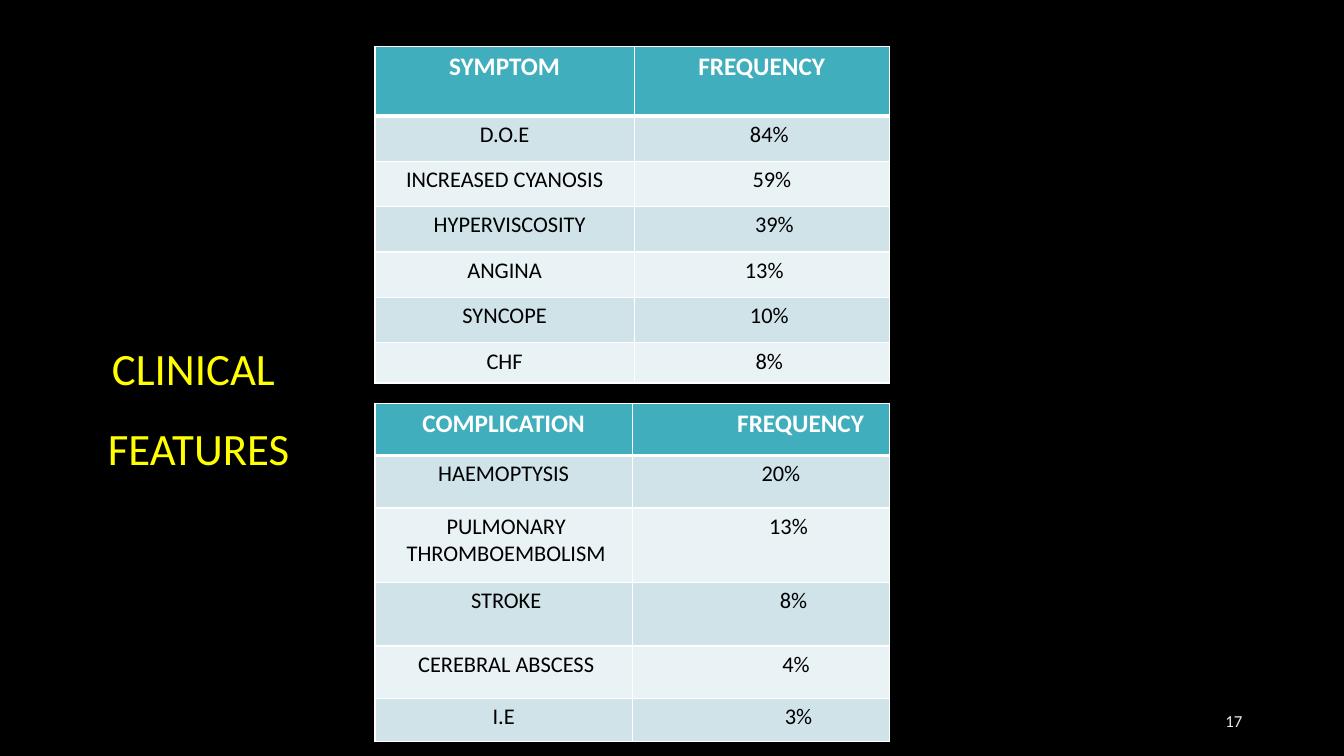
"""Build the clinical features slide with its two frequency tables."""
from copy import deepcopy

from lxml import etree
from pptx import Presentation
from pptx import util as u
from pptx.dml.color import RGBColor
from pptx.enum import text as t
from pptx.oxml import ns

BLACK = RGBColor(0x00, 0x00, 0x00)
WHITE = RGBColor(0xFF, 0xFF, 0xFF)
YELLOW = RGBColor(0xFF, 0xFF, 0x00)
TEAL = RGBColor(0x41, 0xAE, 0xBD)
BANDS = [RGBColor(0xE9, 0xF2, 0xF4), RGBColor(0xCF, 0xE3, 0xE8)]
GREYS = [(0, RGBColor(0x9E, 0x9E, 0x9E)), (0.28, RGBColor(0xED, 0xED, 0xED)), (1, WHITE)]
FONT = "Calibri"
LEFT = 3.72
PAD = 0.1

# Each row: height, label, label indent, value, value indent.
SYMPTOMS = [
    (0.69, "SYMPTOM", 0, "FREQUENCY", 0),
    (0.45, "D.O.E", 0, "84%", 0.15),
    (0.45, "INCREASED CYANOSIS", 0, "59%", 0.2),
    (0.45, "HYPERVISCOSITY", 0.1, "39%", 0.25),
    (0.45, "ANGINA", 0, "13%", 0.05),
    (0.45, "SYNCOPE", 0, "10%", 0.15),
    (0.4, "CHF", 0, "8%", 0.15),
]
RISKS = [
    (0.52, "COMPLICATION", 0, "FREQUENCY", 0.79),
    (0.52, "HAEMOPTYSIS", 0, "20%", 0.4),
    (0.74, "PULMONARY THROMBOEMBOLISM", 0.05, "13%", 0.55),
    (0.63, "STROKE", 0.05, "8%", 0.65),
    (0.52, "CEREBRAL ABSCESS", 0.05, "4%", 0.7),
    (0.43, "I.E", 0, "3%", 0.75),
]


def add_run(para, words, size, color=None, bold=False):
    """Add one formatted run to a paragraph."""
    run = para.add_run()
    run.text = words
    font = run.font
    font.name, font.size, font.bold = FONT, u.Pt(size), bold
    if color is not None:
        font.color.rgb = color
    return run


def add_edge(cell, side, width):
    """Draw a white border on one side of a cell."""
    props = cell._tc.get_or_add_tcPr()
    line = etree.SubElement(props, ns.qn("a:ln" + side), w=str(u.Pt(width)))
    fill = etree.SubElement(line, ns.qn("a:solidFill"))
    etree.SubElement(fill, ns.qn("a:srgbClr"), val=str(WHITE))


def fill_cell(cell, row, words, shift):
    """Format one cell and write its text."""
    head = row == 0
    for side in "LRTB":
        thick = (row, side) in [(0, "B"), (1, "T")]
        add_edge(cell, side, 3 if thick else 1)
    cell.fill.solid()
    cell.fill.fore_color.rgb = TEAL if head else BANDS[row % 2]
    cell.margin_left = u.Inches(PAD + shift)
    para = cell.text_frame.paragraphs[0]
    para.alignment = t.PP_ALIGN.CENTER
    add_run(para, words, 18 if head else 16, WHITE if head else BLACK, head)


def add_grid(slide, top, widths, rows):
    """Add a two-column frequency table."""
    high = sum(row[0] for row in rows)
    frame = slide.shapes.add_table(len(rows), 2, u.Inches(LEFT), u.Inches(top),
                                   u.Inches(sum(widths)), u.Inches(high))
    grid = frame.table
    for col, width in zip(grid.columns, widths):
        col.width = u.Inches(width)
    for i, (tall, label, inset, value, shift) in enumerate(rows):
        grid.rows[i].height = u.Inches(tall)
        fill_cell(grid.cell(i, 0), i, label, inset)
        fill_cell(grid.cell(i, 1), i, value, shift)


def set_title(slide):
    """Place and format the title."""
    title = slide.shapes.title
    title.left, title.top = u.Inches(0.61), u.Inches(3.02)
    title.width, title.height = u.Inches(2.72), u.Inches(1.78)
    title.text_frame.vertical_anchor = t.MSO_ANCHOR.MIDDLE
    para = title.text_frame.paragraphs[0]
    para.alignment = t.PP_ALIGN.CENTER
    para.line_spacing = 1.5
    add_run(para, "CLINICAL ", 32, YELLOW)
    para.add_line_break()
    add_run(para, "FEATURES", 32, YELLOW)


def add_number(slide):
    """Add the slide number in a grey gradient."""
    box = slide.shapes.add_textbox(u.Inches(9.42), u.Inches(6.95), u.Inches(3), u.Inches(0.4))
    frame = box.text_frame
    frame.word_wrap = True
    frame.vertical_anchor = t.MSO_ANCHOR.MIDDLE
    para = frame.paragraphs[0]
    para.alignment = t.PP_ALIGN.RIGHT
    run = add_run(para, "17", 12)
    fill = run.font.fill
    fill.gradient()
    fill.gradient_angle = 270
    stops = run._r.find(".//" + ns.qn("a:gsLst"))
    stops.append(deepcopy(stops[-1]))
    for stop, (place, color) in zip(fill.gradient_stops, GREYS):
        stop.position = place
        stop.color.rgb = color


def main():
    """Build and save the slide."""
    deck = Presentation()
    deck.slide_width, deck.slide_height = u.Inches(13.33), u.Inches(7.5)
    slide = deck.slides.add_slide(deck.slide_layouts[5])
    slide.background.fill.solid()
    slide.background.fill.fore_color.rgb = BLACK
    add_grid(slide, 4, [2.55, 2.55], RISKS)
    set_title(slide)
    add_number(slide)
    add_grid(slide, 0.46, [2.57, 2.53], SYMPTOMS)
    deck.save("out.pptx")


if __name__ == "__main__":
    main()
